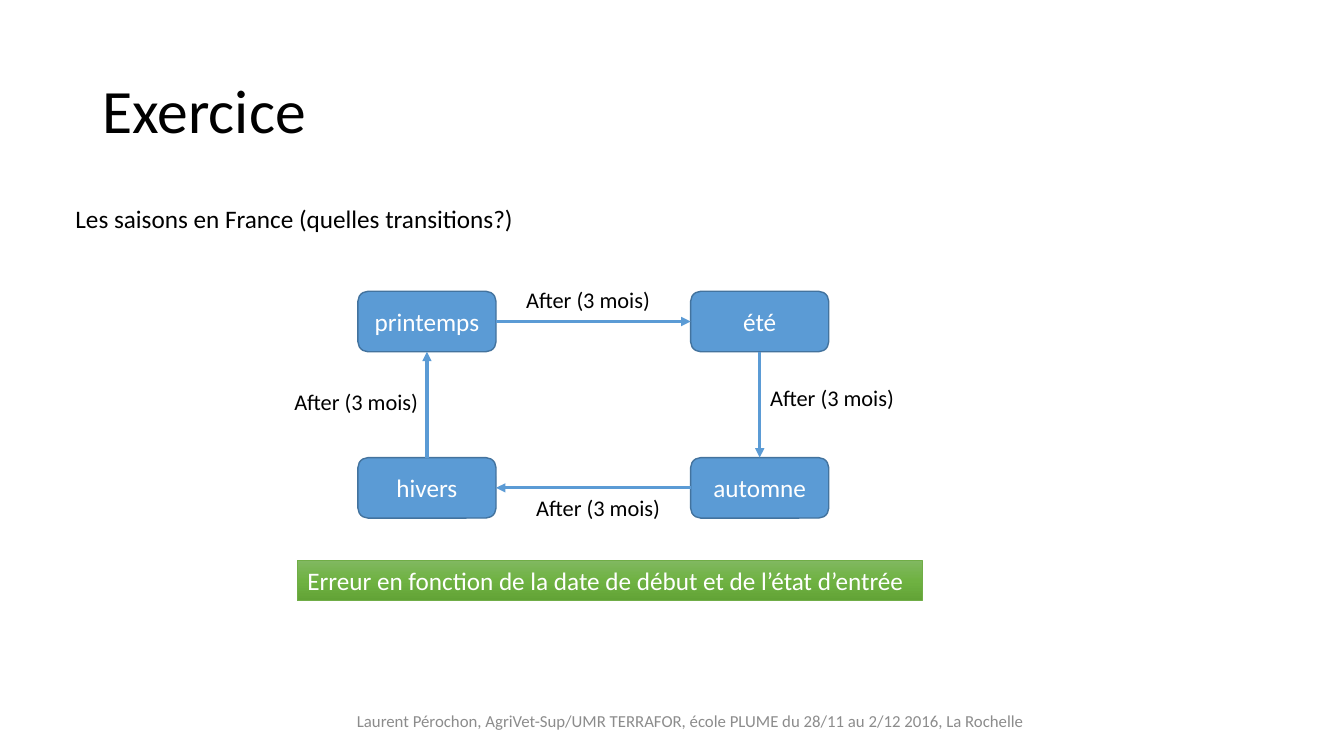
import copy
from dataclasses import dataclass

import pptx
import pptx.dml.color
import pptx.enum.shapes
import pptx.enum.text
import pptx.oxml
import pptx.oxml.ns
import pptx.util

PX = 9144  # EMU per px, 100 px to the inch
FONT = "Calibri"
COLORS = {
    "text": "000000", "footer": "8C8C8C", "white": "FFFFFF",
    "state": "5B9BD5", "state_line": "43739E", "banner_line": "70AD47",
}
BANNER_STOPS = ["81B861", "6FB242", "62A336"]
ALIGN = pptx.enum.text.PP_ALIGN
ANCHOR = pptx.enum.text.MSO_ANCHOR
SHAPE = pptx.enum.shapes.MSO_SHAPE
TOP, LEFT, BOTTOM, RIGHT = range(4)


@dataclass
class State:
    name: str
    col: int
    row: int


@dataclass
class Transition:
    source: str
    source_side: int
    target: str
    target_side: int
    label_x: int
    label_y: int


STATES = [State("printemps", 0, 0), State("été", 1, 0),
          State("automne", 1, 1), State("hivers", 0, 1)]
TRANSITIONS = [
    Transition("printemps", RIGHT, "été", LEFT, 512, 279),
    Transition("été", BOTTOM, "automne", TOP, 754, 376),
    Transition("automne", LEFT, "hivers", RIGHT, 522, 485),
    Transition("hivers", TOP, "printemps", BOTTOM, 282, 380),
]


def rgb(value: str) -> pptx.dml.color.RGBColor:
    return pptx.dml.color.RGBColor.from_string(value)


def box(x: int, y: int, w: int, h: int) -> list[int]:
    return [v * PX for v in (x, y, w, h)]


def set_text(sp, text: str, *, size: int = 18, color: str = "text",
             align=ALIGN.LEFT, anchor=ANCHOR.TOP, wrap: bool = False,
             spacing: float = 1.0) -> None:
    tf = sp.text_frame
    tf.word_wrap = wrap
    tf.vertical_anchor = anchor
    p = tf.paragraphs[0]
    p.alignment = align
    p.line_spacing = spacing
    r = p.add_run()
    r.text = text
    r.font.name = FONT
    r.font.size = pptx.util.Pt(size)
    r.font.color.rgb = rgb(COLORS[color])


def add_text(slide, x: int, y: int, w: int, h: int, text: str, **fmt) -> None:
    set_text(slide.shapes.add_textbox(*box(x, y, w, h)), text, **fmt)


def add_state(slide, state: State):
    sp = slide.shapes.add_shape(
        SHAPE.ROUNDED_RECTANGLE,
        *box(355 + 330 * state.col, 289 + 165 * state.row, 137, 60))
    sp.shadow.inherit = False
    sp.fill.solid()
    sp.fill.fore_color.rgb = rgb(COLORS["state"])
    sp.line.color.rgb = rgb(COLORS["state_line"])
    sp.line.width = pptx.util.Pt(1)
    set_text(sp, state.name, color="white", align=ALIGN.CENTER,
             anchor=ANCHOR.MIDDLE, wrap=True)
    return sp


def add_transition(slide, t: Transition, boxes: dict) -> None:
    line = slide.shapes.add_connector(
        pptx.enum.shapes.MSO_CONNECTOR.STRAIGHT, 0, 0, 0, 0)
    line.begin_connect(boxes[t.source], t.source_side)
    line.end_connect(boxes[t.target], t.target_side)
    line.line.color.rgb = rgb(COLORS["state"])
    line.line.width = pptx.util.Pt(2.25)
    tail = pptx.oxml.ns.qn("a:tailEnd")
    ln = line.line._get_or_add_ln()
    ln.makeelement(tail)
    ln.append(ln.makeelement(tail, {"type": "triangle"}))
    spPr = line._element.spPr
    spPr.append(spPr.makeelement(pptx.oxml.ns.qn("a:effectLst")))
    add_text(slide, t.label_x, t.label_y, 145, 37, "After (3 mois)", size=16)


def add_banner(slide, text: str) -> None:
    sp = slide.shapes.add_shape(SHAPE.RECTANGLE, *box(295, 556, 620, 40))
    sp.shadow.inherit = False
    sp.fill.gradient()
    sp.fill.gradient_angle = 270
    # A third stop goes between the two default ones
    stops = next(sp._element.iter(pptx.oxml.ns.qn("a:gsLst")))
    stops.insert(1, copy.deepcopy(stops[0]))
    for i, (stop, color) in enumerate(zip(sp.fill.gradient_stops, BANNER_STOPS)):
        stop.position = i / 2
        stop.color.rgb = rgb(color)
    sp.line.color.rgb = rgb(COLORS["banner_line"])
    sp.line.width = pptx.util.Pt(0.5)
    set_text(sp, text, color="white")


def main() -> None:
    prs = pptx.Presentation()
    prs.slide_width, prs.slide_height = 1333 * PX, 750 * PX
    slide = prs.slides.add_slide(prs.slide_layouts[6])

    # Title, footer and question
    add_text(slide, 92, 40, 1150, 145, "Exercice", size=44,
             anchor=ANCHOR.MIDDLE, wrap=True, spacing=0.9)
    add_text(slide, 230, 695, 910, 40,
             "Laurent Pérochon, AgriVet-Sup/UMR TERRAFOR, école PLUME "
             "du 28/11 au 2/12 2016, La Rochelle",
             size=12, color="footer", align=ALIGN.CENTER,
             anchor=ANCHOR.MIDDLE, wrap=True)
    add_text(slide, 65, 197, 460, 40,
             "Les saisons en France (quelles transitions?)")

    # Cycle of the seasons
    boxes = {state.name: add_state(slide, state) for state in STATES}
    for t in TRANSITIONS:
        add_transition(slide, t, boxes)

    # Conclusion
    add_banner(slide, "Erreur en fonction de la date de début "
                      "et de l’état d’entrée")
    prs.save("out.pptx")


if __name__ == "__main__":
    main()
